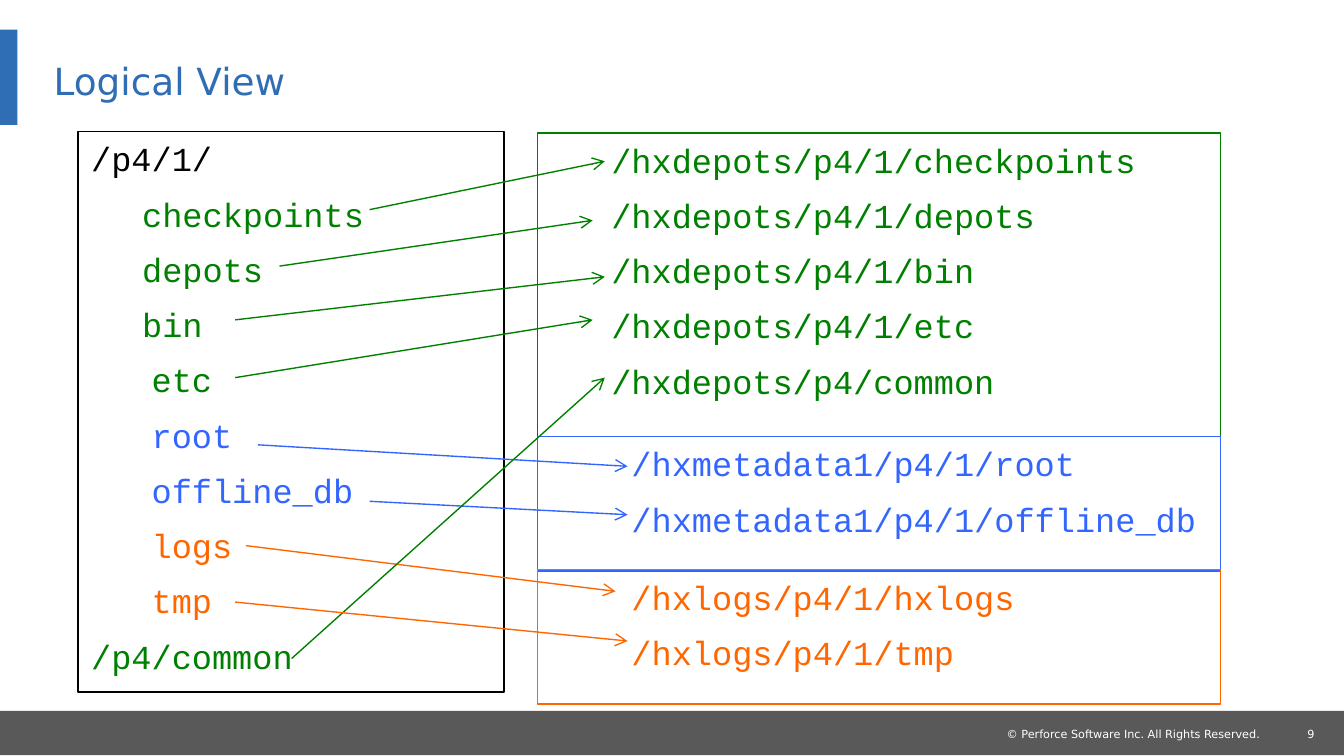
from lxml import etree
from pptx import Presentation
from pptx.dml.color import RGBColor
from pptx.enum.shapes import MSO_CONNECTOR as Conn, MSO_SHAPE as Kind
from pptx.enum.text import MSO_ANCHOR as Anchor, PP_ALIGN as Align
from pptx.oxml.ns import qn
from pptx.util import Inches, Pt

BLACK = RGBColor(0x00, 0x00, 0x00)
WHITE = RGBColor(0xFF, 0xFF, 0xFF)
GREEN = RGBColor(0x00, 0x80, 0x00)
BLUE = RGBColor(0x33, 0x66, 0xFF)
ORANGE = RGBColor(0xFF, 0x66, 0x00)
ACCENT = RGBColor(0x2F, 0x6D, 0xB5)
GRAY = RGBColor(0x59, 0x59, 0x59)
SANS, MONO = "DejaVu Sans", "Courier New"
CHAR = 0.15  # width of one 18 pt mono character
TAB = 0.38

# Boxes: place, line colour, rows of (text, indent, colour)
BOXES = [
    ((4, 0.99, 5.08, 2.26), GREEN, [
        ("/hxdepots/p4/1/checkpoints", 3 * CHAR, GREEN),
        ("/hxdepots/p4/1/depots", 3 * CHAR, GREEN),
        ("/hxdepots/p4/1/bin", 3 * CHAR, GREEN),
        ("/hxdepots/p4/1/etc", 3 * CHAR, GREEN),
        ("/hxdepots/p4/common", 3 * CHAR, GREEN)]),
    ((4, 3.25, 5.08, 1), BLUE, [
        ("/hxmetadata1/p4/1/root", 4 * CHAR, BLUE),
        ("/hxmetadata1/p4/1/offline_db", 4 * CHAR, BLUE)]),
    ((4, 4.24, 5.08, 1), ORANGE, [
        ("/hxlogs/p4/1/hxlogs", 4 * CHAR, ORANGE),
        ("/hxlogs/p4/1/tmp", 4 * CHAR, ORANGE)]),
    ((0.58, 0.98, 3.17, 4.17), BLACK, [
        ("/p4/1/", 0, BLACK),
        ("checkpoints", TAB, GREEN),
        ("depots", TAB, GREEN),
        ("bin", TAB, GREEN),
        ("etc", 3 * CHAR, GREEN),
        ("root", 3 * CHAR, BLUE),
        ("offline_db", 3 * CHAR, BLUE),
        ("logs", 3 * CHAR, ORANGE),
        ("tmp", 3 * CHAR, ORANGE),
        ("/p4/common", 0, GREEN)]),
]

# Arrows: start, end, colour
ARROWS = [
    ((2.75, 1.56), (4.5, 1.2), GREEN),
    ((2.08, 1.98), (4.41, 1.64), GREEN),
    ((1.75, 2.38), (4.5, 2.06), GREEN),
    ((1.75, 2.81), (4.41, 2.38), GREEN),
    ((1.92, 3.31), (4.67, 3.47), BLUE),
    ((2.75, 3.73), (4.67, 3.83), BLUE),
    ((1.83, 4.06), (4.58, 4.4), ORANGE),
    ((2.17, 4.9), (4.5, 2.81), GREEN),
    ((1.75, 4.48), (4.67, 4.77), ORANGE),
]

deck = Presentation()
deck.slide_width = Inches(10)
deck.slide_height = Inches(10 * 9 / 16)
slide = deck.slides.add_slide(deck.slide_layouts[6])
shapes = slide.shapes


def add_rect(place, fill=None, line=None):
    rect = shapes.add_shape(Kind.RECTANGLE, *map(Inches, place))
    rect.shadow.inherit = False
    if fill is None:
        rect.fill.background()
    else:
        rect.fill.solid()
        rect.fill.fore_color.rgb = fill
    if line is None:
        rect.line.fill.background()
    else:
        rect.line.color.rgb = line
        rect.line.width = Pt(0.75)
    return rect


def style(para, size, face, color):
    for run in para.runs:
        run.font.size, run.font.name = Pt(size), face
        run.font.color.rgb = color


def add_label(place, text, size, color, wrap=True, align=Align.LEFT):
    frame = shapes.add_textbox(*map(Inches, place)).text_frame
    frame.margin_left = frame.margin_right = 0
    frame.margin_top = frame.margin_bottom = 0
    frame.word_wrap = wrap
    frame.text = text
    para = frame.paragraphs[0]
    para.alignment = align
    style(para, size, SANS, color)
    return frame


def add_box(place, line, rows):
    frame = add_rect(place, line=line).text_frame
    frame.word_wrap = True
    frame.vertical_anchor = Anchor.TOP
    frame.text = "\n".join(text for text, _, _ in rows)
    for para, (_, indent, color) in zip(frame.paragraphs, rows):
        para.alignment = Align.LEFT
        para.space_after = Pt(8)
        props = para._p.get_or_add_pPr()
        props.set("marL", str(Inches(indent)))
        props.set("indent", "0")
        style(para, 18, MONO, color)


def add_arrow(start, end, color):
    arrow = shapes.add_connector(Conn.STRAIGHT, *map(Inches, start + end))
    arrow.line.color.rgb = color
    arrow.line.width = Pt(0.75)
    etree.SubElement(arrow.line._get_or_add_ln(), qn("a:tailEnd"), type="arrow")
    etree.SubElement(arrow._element.spPr, qn("a:effectLst"))


# Footer and title
add_rect((0, 5.29, 10, 0.33), fill=GRAY)
add_label((9.35, 5.41, 0.43, 0.1), "9", 6, WHITE, align=Align.RIGHT)
add_label((7.49, 5.41, 1.94, 0.1),
          "© Perforce Software Inc. All Rights Reserved.", 6, WHITE, wrap=False)
add_rect((0, 0.22, 0.13, 0.71), fill=ACCENT)
title = add_label((0.4, 0.28, 7.74, 0.6), "Logical View", 20, ACCENT)
title.vertical_anchor = Anchor.MIDDLE
title.paragraphs[0].line_spacing = Pt(27)

# Directory boxes and the links between them
for box in BOXES:
    add_box(*box)
for arrow in ARROWS:
    add_arrow(*arrow)

deck.save("out.pptx")
